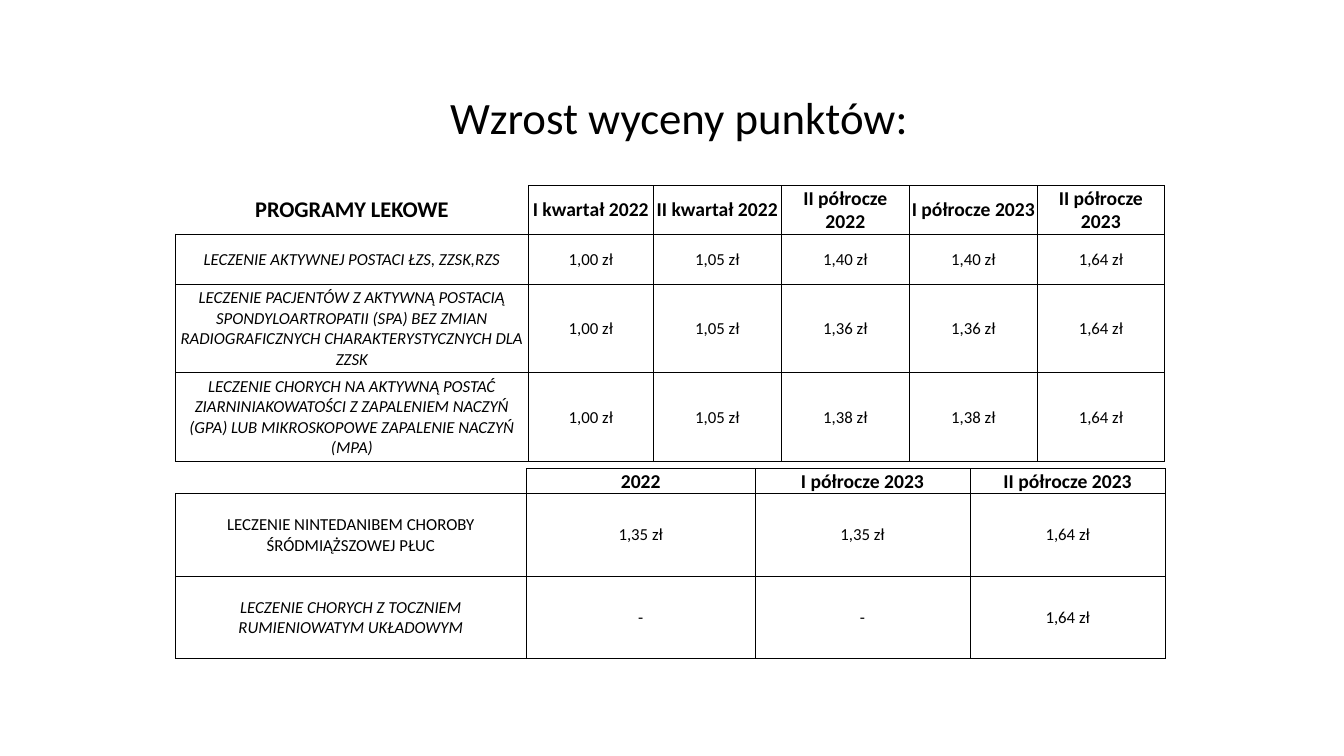
from dataclasses import dataclass

from lxml import etree
from pptx import Presentation
from pptx import util as u
from pptx.dml.color import RGBColor
from pptx.enum import text
from pptx.oxml import ns


@dataclass(frozen=True)
class Theme:
    font: str = "Calibri"
    ink: str = "000000"
    title: int = 32
    corner: int = 16
    header: int = 14
    body: int = 12
    border: float = 0.5


class SlideBuilder:
    def __init__(self, prs, theme):
        self.theme = theme
        self.s = prs.slides.add_slide(prs.slide_layouts[6])

    def set_text(self, tf, content, size, bold=False, italic=False):
        tf.word_wrap = True
        tf.text = content
        p = tf.paragraphs[0]
        p.alignment = text.PP_ALIGN.CENTER
        # The paragraph font also sets the height of an empty cell.
        for font in [p.font] + [r.font for r in p.runs]:
            font.name = self.theme.font
            font.size = u.Pt(size)
            font.bold = bold
            font.italic = italic
            font.color.rgb = RGBColor.from_string(self.theme.ink)
        return p

    def title(self, content, left, top, width, height):
        sp = self.s.shapes.add_textbox(*map(u.Inches, (left, top, width, height)))
        sp.text_frame.vertical_anchor = text.MSO_ANCHOR.TOP
        p = self.set_text(sp.text_frame, content, self.theme.title)
        p.line_spacing = 0.9

    def borders(self, cell, sides):
        """Draw the given sides (letters of LRTB) and clear the others."""
        tcPr = cell._tc.get_or_add_tcPr()
        for i, side in enumerate("LRTB"):
            ln = etree.Element(ns.qn(f"a:ln{side}"), w=str(u.Pt(self.theme.border)))
            if side in sides:
                fill = etree.SubElement(ln, ns.qn("a:solidFill"))
                etree.SubElement(fill, ns.qn("a:srgbClr"), val=self.theme.ink)
            else:
                etree.SubElement(ln, ns.qn("a:noFill"))
            tcPr.insert(i, ln)

    def table(self, left, top, widths, heights, rows, upright=()):
        """Add a price table; labels are italic except in the rows listed in upright."""
        frame = self.s.shapes.add_table(
            len(rows), len(widths),
            *map(u.Inches, (left, top, sum(widths), sum(heights))))
        tbl = frame.table
        tbl.first_row = tbl.horz_banding = False
        for col, width in zip(tbl.columns, widths):
            col.width = u.Inches(width)
        for row, height in zip(tbl.rows, heights):
            row.height = u.Inches(height)
        for i, row in enumerate(rows):
            for j, content in enumerate(row):
                cell = tbl.cell(i, j)
                corner = i == j == 0
                cell.margin_left = cell.margin_right = cell.margin_top = u.Inches(0.01)
                cell.margin_bottom = 0
                cell.vertical_anchor = text.MSO_ANCHOR.MIDDLE
                cell.fill.background()
                self.borders(cell, "RB" if corner else "LRTB")
                if i > 0:
                    size = self.theme.body
                elif corner and content:
                    size = self.theme.corner
                else:
                    size = self.theme.header
                self.set_text(cell.text_frame, content, size, bold=i == 0,
                              italic=i > 0 and j == 0 and i not in upright)


PROGRAMMES = [
    ["PROGRAMY LEKOWE", "I kwartał 2022", "II kwartał 2022", "II półrocze 2022",
     "I półrocze 2023", "II półrocze 2023"],
    ["LECZENIE AKTYWNEJ POSTACI ŁZS, ZZSK,RZS",
     "1,00 zł", "1,05 zł", "1,40 zł", "1,40 zł", "1,64 zł"],
    ["LECZENIE PACJENTÓW Z AKTYWNĄ POSTACIĄ SPONDYLOARTROPATII (SPA) BEZ ZMIAN "
     "RADIOGRAFICZNYCH CHARAKTERYSTYCZNYCH DLA ZZSK",
     "1,00 zł", "1,05 zł", "1,36 zł", "1,36 zł", "1,64 zł"],
    ["LECZENIE CHORYCH NA AKTYWNĄ POSTAĆ ZIARNINIAKOWATOŚCI Z ZAPALENIEM NACZYŃ "
     "(GPA) LUB MIKROSKOPOWE ZAPALENIE NACZYŃ (MPA)",
     "1,00 zł", "1,05 zł", "1,38 zł", "1,38 zł", "1,64 zł"],
]
NEW_PROGRAMMES = [
    ["", "2022", "I półrocze 2023", "II półrocze 2023"],
    ["LECZENIE NINTEDANIBEM CHOROBY ŚRÓDMIĄŻSZOWEJ PŁUC",
     "1,35 zł", "1,35 zł", "1,64 zł"],
    ["LECZENIE CHORYCH Z TOCZNIEM RUMIENIOWATYM UKŁADOWYM", "-", "-", "1,64 zł"],
]


def main():
    prs = Presentation()
    prs.slide_width, prs.slide_height = u.Inches(13.33), u.Inches(7.5)
    b = SlideBuilder(prs, Theme())
    b.title("Wzrost wyceny punktów:", 1.26, 0.9, 10.95, 5.7)
    b.table(1.74, 1.84, [3.5, 1.24, 1.27, 1.27, 1.27, 1.26],
            [0.48, 0.5, 0.87, 0.89], PROGRAMMES)
    b.table(1.74, 4.65, [3.48, 2.27, 2.13, 1.94],
            [0.24, 0.82, 0.82], NEW_PROGRAMMES, upright=(1,))
    prs.save("out.pptx")


if __name__ == "__main__":
    main()
